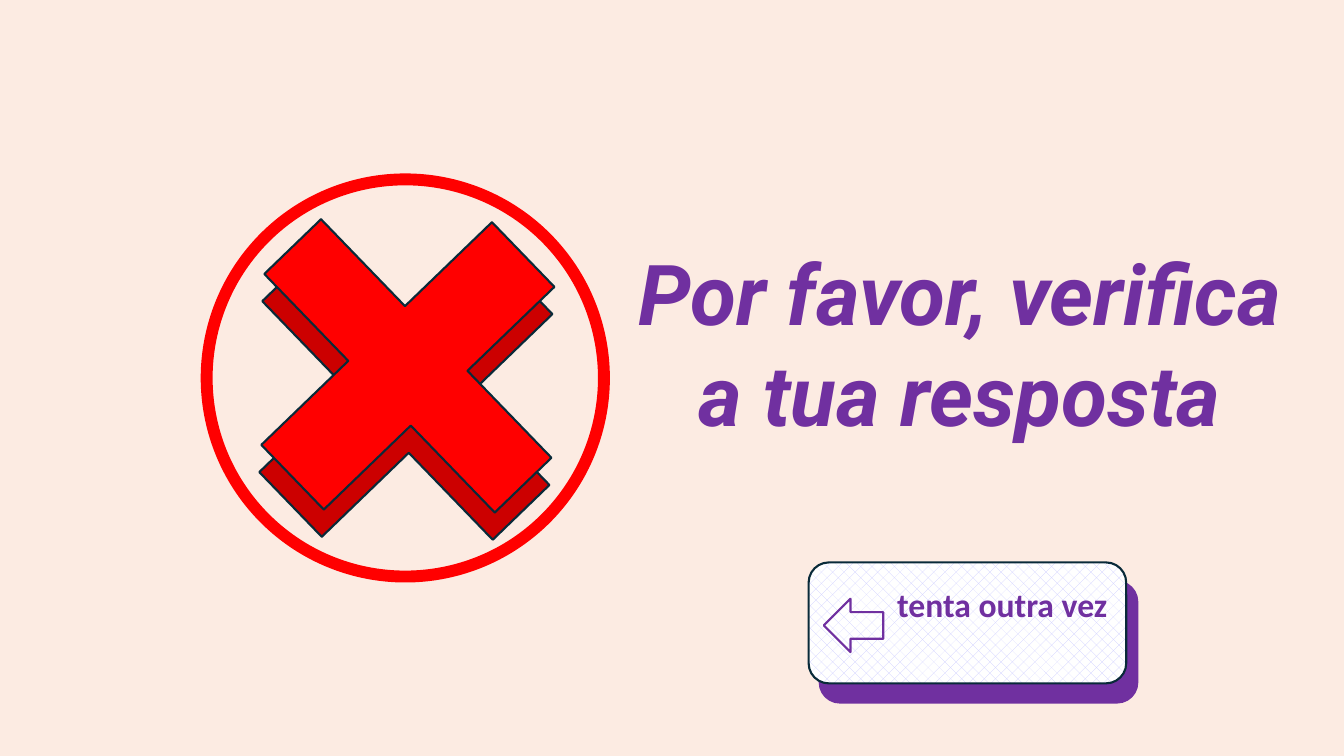
import pptx
import pptx.util
import pptx.dml.color
import pptx.enum.dml
import pptx.enum.shapes
import pptx.enum.text
from dataclasses import dataclass

SHAPES = pptx.enum.shapes.MSO_SHAPE
ALIGN = pptx.enum.text.PP_ALIGN
ANCHOR = pptx.enum.text.MSO_ANCHOR
WIDTH, HEIGHT = 13.33, 7.5


@dataclass(frozen=True)
class Theme:
    background: str = "FCEBE2"
    purple: str = "7030A0"
    red: str = "FF0000"
    dark_red: str = "CC0000"
    outline: str = "092A39"
    pattern: str = "CCCCFF"
    white: str = "FFFFFF"
    title_font: str = "Roboto"
    button_font: str = "Calibri"
    title_size: int = 60
    button_size: int = 24
    thin: float = 1.5
    thick: float = 8.5


THEME = Theme()


def color(value):
    return pptx.dml.color.RGBColor.from_string(value)


def inches(*lengths):
    return [pptx.util.Inches(length) for length in lengths]


def add_figure(slide, kind, box, line, fill=None, weight=THEME.thin):
    shape = slide.shapes.add_shape(kind, *inches(*box))
    shape.shadow.inherit = False
    shape.line.color.rgb = color(line)
    shape.line.width = pptx.util.Pt(weight)
    if fill:
        shape.fill.solid()
        shape.fill.fore_color.rgb = color(fill)
    else:
        shape.fill.background()
    return shape


def style(paragraph, font, size, align):
    paragraph.alignment = align
    paragraph.font.name = font
    paragraph.font.size = pptx.util.Pt(size)
    paragraph.font.bold = True
    paragraph.font.color.rgb = color(THEME.purple)


def set_title(slide, lines, box):
    title = slide.shapes.title
    title.left, title.top, title.width, title.height = inches(*box)
    frame = title.text_frame
    frame.text = "\n".join(lines)
    frame.word_wrap = False
    frame.auto_size = pptx.enum.text.MSO_AUTO_SIZE.NONE
    frame.vertical_anchor = ANCHOR.TOP
    for paragraph in frame.paragraphs:
        style(paragraph, THEME.title_font, THEME.title_size, ALIGN.CENTER)
        paragraph.font.italic = True
        paragraph.space_before = pptx.util.Pt(0)
        paragraph.line_spacing = 1.0


def add_cross(slide, left, top, fill):
    cross = add_figure(slide, SHAPES.CROSS, (left, top, 3.29, 3.18), THEME.outline, fill)
    cross.adjustments[0] = 0.377
    cross.rotation = 46


def add_button(slide, text, left, top):
    size = (3.15, 1.2)
    kind = SHAPES.ROUNDED_RECTANGLE
    add_figure(slide, kind, (left + 0.11, top + 0.19, *size), THEME.purple, THEME.purple)
    button = add_figure(slide, kind, (left, top, *size), THEME.outline)
    button.fill.patterned()
    button.fill.pattern = pptx.enum.dml.MSO_PATTERN.PERCENT_25
    button.fill.fore_color.rgb = color(THEME.pattern)
    button.fill.back_color.rgb = color(THEME.white)
    frame = button.text_frame
    frame.text = text
    frame.word_wrap = True
    frame.vertical_anchor = ANCHOR.MIDDLE
    frame.margin_left, frame.margin_top, frame.margin_right, frame.margin_bottom = inches(
        0.82, 0, 0, 0.32)
    paragraph = frame.paragraphs[0]
    style(paragraph, THEME.button_font, THEME.button_size, ALIGN.LEFT)
    paragraph.line_spacing = 0.9
    add_figure(slide, SHAPES.LEFT_ARROW, (left + 0.15, top + 0.36, 0.59, 0.53), THEME.purple)


def main():
    presentation = pptx.Presentation()
    presentation.slide_width, presentation.slide_height = inches(WIDTH, HEIGHT)
    slide = presentation.slides.add_slide(presentation.slide_layouts[5])
    slide.background.fill.solid()
    slide.background.fill.fore_color.rgb = color(THEME.background)

    set_title(slide, ["Por favor, verifica", "a tua resposta"], (6.03, 2.35, 6.98, 2.12))
    add_figure(slide, SHAPES.FLOWCHART_CONNECTOR, (2.05, 1.78, 3.94, 3.94),
               THEME.red, weight=THEME.thick)
    add_cross(slide, 2.38, 2.31, THEME.dark_red)
    add_cross(slide, 2.4, 2.04, THEME.red)
    add_button(slide, "tenta outra vez", 8.02, 5.58)
    presentation.save("out.pptx")


if __name__ == "__main__":
    main()
